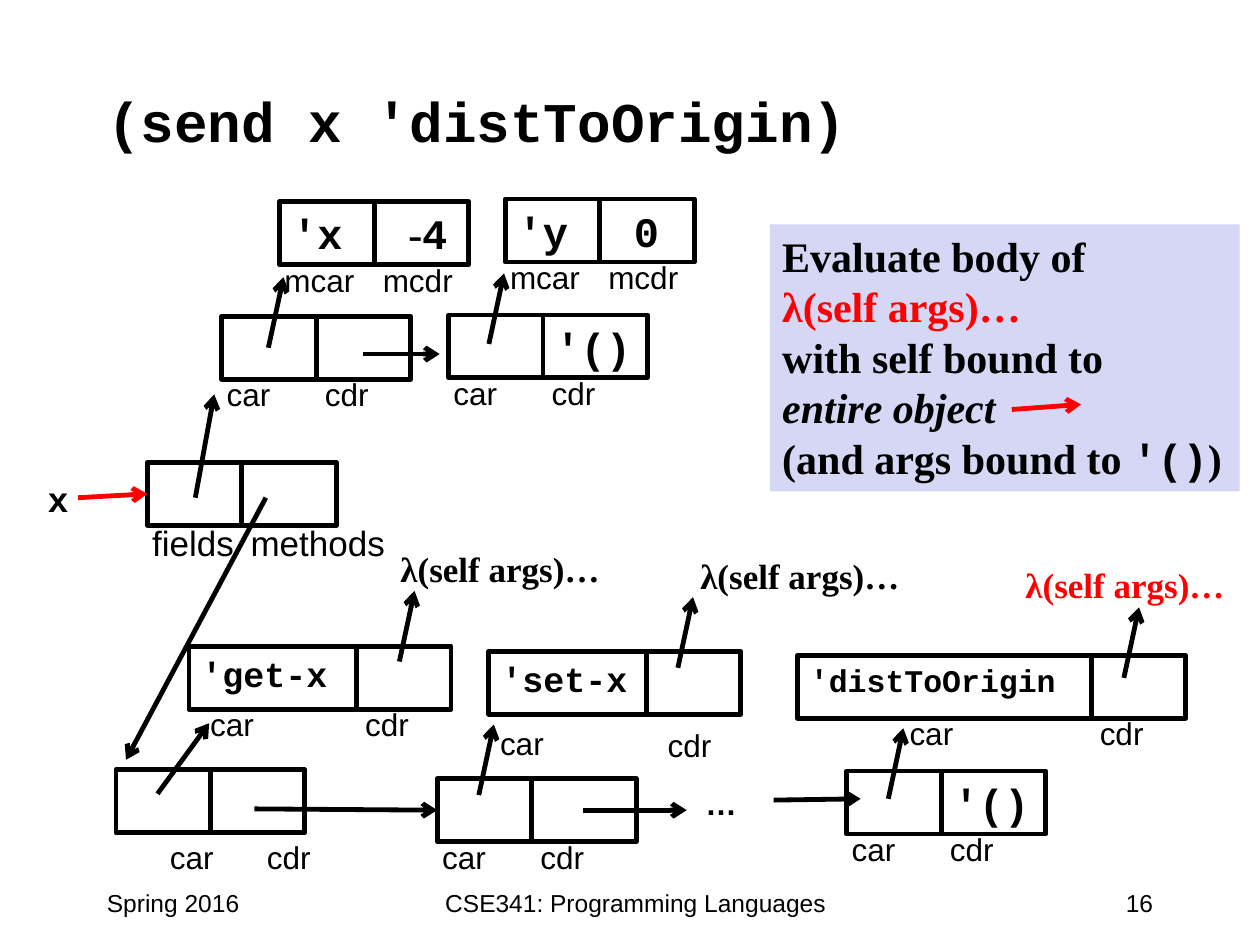
from pptx import Presentation
from pptx.dml.color import RGBColor
from pptx.enum.shapes import MSO_CONNECTOR, MSO_SHAPE
from pptx.enum.text import MSO_ANCHOR, MSO_AUTO_SIZE, PP_ALIGN
from pptx.oxml.ns import qn
from pptx.util import Inches, Pt
from lxml.etree import SubElement

BLACK = RGBColor(0x00, 0x00, 0x00)
RED = RGBColor(0xFF, 0x00, 0x00)
LAVENDER = RGBColor(0xD6, 0xD6, 0xF5)
SANS, MONO, SERIF = "Arial", "Courier New", "Times New Roman"
CELL_WIDTH, CELL_HEIGHT = 0.75, 0.5
LAMBDA = "λ(self args)…"
LABEL_WIDTHS = {"car": 0.55, "cdr": 0.55, "mcar": 0.76, "mcdr": 0.76,
                "fields": 0.86, "methods": 1.28}


class PairDiagram:
    """Draws cons cells, their labels and pointers on one slide."""

    line_width = Pt(2.75)

    def __init__(self, page):
        self.page = page

    def style(self, target, size, name, color=BLACK, bold=False):
        """Formats a paragraph or a span."""
        font = target.font
        font.size, font.name, font.bold = Pt(size), name, bold
        font.color.rgb = color

    def spans(self, para, size, parts):
        """Adds bold spans, each given as (text, font name, color, italic)."""
        para.alignment = PP_ALIGN.LEFT
        for text, name, color, italic in parts:
            span = para.add_run()
            span.text = text
            self.style(span, size, name, color, bold=True)
            span.font.italic = italic

    def title(self, text):
        box = self.page.shapes.title
        box.left, box.top = Inches(0.75), Inches(0.33)
        box.width, box.height = Inches(8.83), Inches(1.25)
        frame = box.text_frame
        frame.text = text
        frame.vertical_anchor = MSO_ANCHOR.MIDDLE
        para = frame.paragraphs[0]
        para.alignment = PP_ALIGN.LEFT
        self.style(para, 32, MONO, bold=True)

    def text(self, left, top, width, text, size=18, name=SANS, color=BLACK,
             bold=False, height=0.4, align=PP_ALIGN.LEFT, wrap=False):
        box = self.page.shapes.add_textbox(
            Inches(left), Inches(top), Inches(width), Inches(height))
        frame = box.text_frame
        frame.word_wrap = wrap
        if not wrap:
            frame.auto_size = MSO_AUTO_SIZE.SHAPE_TO_FIT_TEXT
        para = frame.paragraphs[0]
        para.text, para.alignment = text, align
        self.style(para, size, name, color, bold)

    def rectangle(self, left, top, width, height):
        box = self.page.shapes.add_shape(
            MSO_SHAPE.RECTANGLE, Inches(left), Inches(top),
            Inches(width), Inches(height))
        box.shadow.inherit = False
        return box

    def cell(self, left, top, width, text="", size=24, inset=0.1):
        box = self.rectangle(left, top, width, CELL_HEIGHT)
        box.fill.background()
        box.line.color.rgb = BLACK
        box.line.width = self.line_width
        if text:
            frame = box.text_frame
            frame.word_wrap = True
            frame.vertical_anchor = MSO_ANCHOR.TOP
            frame.margin_left, frame.margin_right = Inches(inset), Inches(0.02)
            # A minus sign is set in the serif font
            digits = text.lstrip("-")
            sign = text[:len(text) - len(digits)]
            self.spans(frame.paragraphs[0], size, [
                (part, name, BLACK, False)
                for part, name in ((sign, SERIF), (digits, MONO)) if part])
        return box

    def pair(self, left, top, labels=("car", "cdr"), texts=("", ""),
             widths=(CELL_WIDTH, CELL_WIDTH), size=24, inset=0.1,
             shifts=((-0.06, 0.42), (-0.03, 0.42)), label_size=18):
        """Two adjoining cells; shifts place each label from its cell corner."""
        boxes = []
        for i, label in enumerate(labels):
            x = left + i * widths[0]
            boxes.append(self.cell(x, top, widths[i], texts[i], size,
                                   inset if i else 0.1))
            dx, dy = shifts[i]
            self.text(x + dx, top + dy, LABEL_WIDTHS[label], label, label_size)
        return boxes

    def arrow(self, start, end, color=BLACK, target=None):
        """Pointer that joins the left side of target when one is given."""
        points = [Inches(value) for value in (*start, *end)]
        line = self.page.shapes.add_connector(MSO_CONNECTOR.STRAIGHT, *points)
        if target is not None:
            line.end_connect(target, 1)
        line.line.color.rgb = color
        line.line.width = self.line_width
        SubElement(line.line._get_or_add_ln(), qn("a:tailEnd"), type="arrow")
        SubElement(line._element.spPr, qn("a:effectLst"))

    def note(self, left, top, width, height, lines):
        box = self.rectangle(left, top, width, height)
        box.fill.solid()
        box.fill.fore_color.rgb = LAVENDER
        box.line.fill.background()
        frame = box.text_frame
        frame.word_wrap = False
        frame.auto_size = MSO_AUTO_SIZE.SHAPE_TO_FIT_TEXT
        frame.vertical_anchor = MSO_ANCHOR.TOP
        for i, parts in enumerate(lines):
            para = frame.add_paragraph() if i else frame.paragraphs[0]
            self.spans(para, 24, parts)


def main():
    deck = Presentation()
    deck.slide_width, deck.slide_height = Inches(10), Inches(7.5)
    diagram = PairDiagram(deck.slides.add_slide(deck.slide_layouts[5]))
    diagram.title("(send x 'distToOrigin)")

    # Footer
    for left, width, text, align in (
            (0.75, 2.08, "Spring 2016", PP_ALIGN.LEFT),
            (3.17, 3.75, "CSE341: Programming Languages", PP_ALIGN.CENTER),
            (7.17, 2.08, "16", PP_ALIGN.RIGHT)):
        diagram.text(left, 7, width, text, 14, height=0.5, align=align, wrap=True)

    # The object: fields and methods
    fields, _ = diagram.pair(1.17, 3.67, ("fields", "methods"), label_size=20)
    diagram.text(0.28, 3.74, 0.37, "x", 20, MONO, bold=True, height=0.44)
    diagram.arrow((0.62, 3.95), (1.17, 3.92), RED, fields)

    # Field list
    mutable = ("mcar", "mcdr")
    wide_end = (CELL_WIDTH, 0.83)
    diagram.pair(2.22, 1.6, mutable, ("'x", "-4"), inset=0.27)
    diagram.pair(4.01, 1.58, mutable, ("'y", "0"), inset=0.27)
    diagram.pair(1.76, 2.51)
    diagram.pair(3.56, 2.5, texts=("", "'()"), widths=wide_end)

    # Method entries
    diagram.pair(1.5, 5.13, texts=("'get-x", ""), widths=(1.33, CELL_WIDTH),
                 size=20, shifts=((0.07, 0.42), (-0.03, 0.42)))
    diagram.pair(3.88, 5.17, texts=("'set-x", ""), widths=(1.25, CELL_WIDTH),
                 size=20, shifts=((-0.01, 0.53), (0.07, 0.54)))
    diagram.pair(6.33, 5.2, texts=("'distToOrigin", ""), size=18,
                 widths=(2.33, CELL_WIDTH), shifts=((0.79, 0.42), (-0.03, 0.42)))
    for left, top, color in ((3.08, 4.3, BLACK), (5.46, 4.35, BLACK),
                             (8.04, 4.42, RED)):
        diagram.text(left, top, 1.87, LAMBDA, 20, SERIF, color, True, 0.44)

    # Method list
    diagram.pair(0.92, 6.11, shifts=((0.33, 0.49), (0.35, 0.49)))
    second, _ = diagram.pair(3.47, 6.18, widths=wide_end)
    diagram.text(5.5, 6.17, 0.45, "…", bold=True)
    diagram.pair(6.72, 6.12, texts=("", "'()"), widths=wide_end)
    diagram.arrow((2.02, 6.42), (3.47, 6.43), target=second)

    # Free pointers
    for start, end in (
            ((1.55, 3.95), (1.7, 3.13)), ((2.11, 3.95), (1, 6.03)),
            ((2.88, 2.81), (3.49, 2.81)), ((1.25, 6.3), (1.66, 5.74)),
            ((4.63, 6.43), (5.45, 6.43)), ((6.14, 6.35), (6.83, 6.34))):
        diagram.arrow(start, end)

    # Pointers from a cell up to its value, all with the same slope
    for x, y in ((2.13, 2.76), (3.88, 2.73), (3.8, 6.31), (7.05, 6.34),
                 (3.17, 5.25), (5.38, 5.3), (8.92, 5.38)):
        diagram.arrow((x, y), (x + 0.12, y - 0.56))

    # Evaluation note
    diagram.note(6.11, 1.78, 3.73, 2.12, [
        [("Evaluate body of", SERIF, BLACK, False)],
        [(LAMBDA, SERIF, RED, False)],
        [("with self bound to", SERIF, BLACK, False)],
        [("entire object", SERIF, BLACK, True)],
        [("(and args bound to ", SERIF, BLACK, False),
         ("'()", MONO, BLACK, False), (")", SERIF, BLACK, False)]])
    diagram.arrow((8.03, 3.25), (8.58, 3.21), RED)

    deck.save("out.pptx")


if __name__ == "__main__":
    main()
